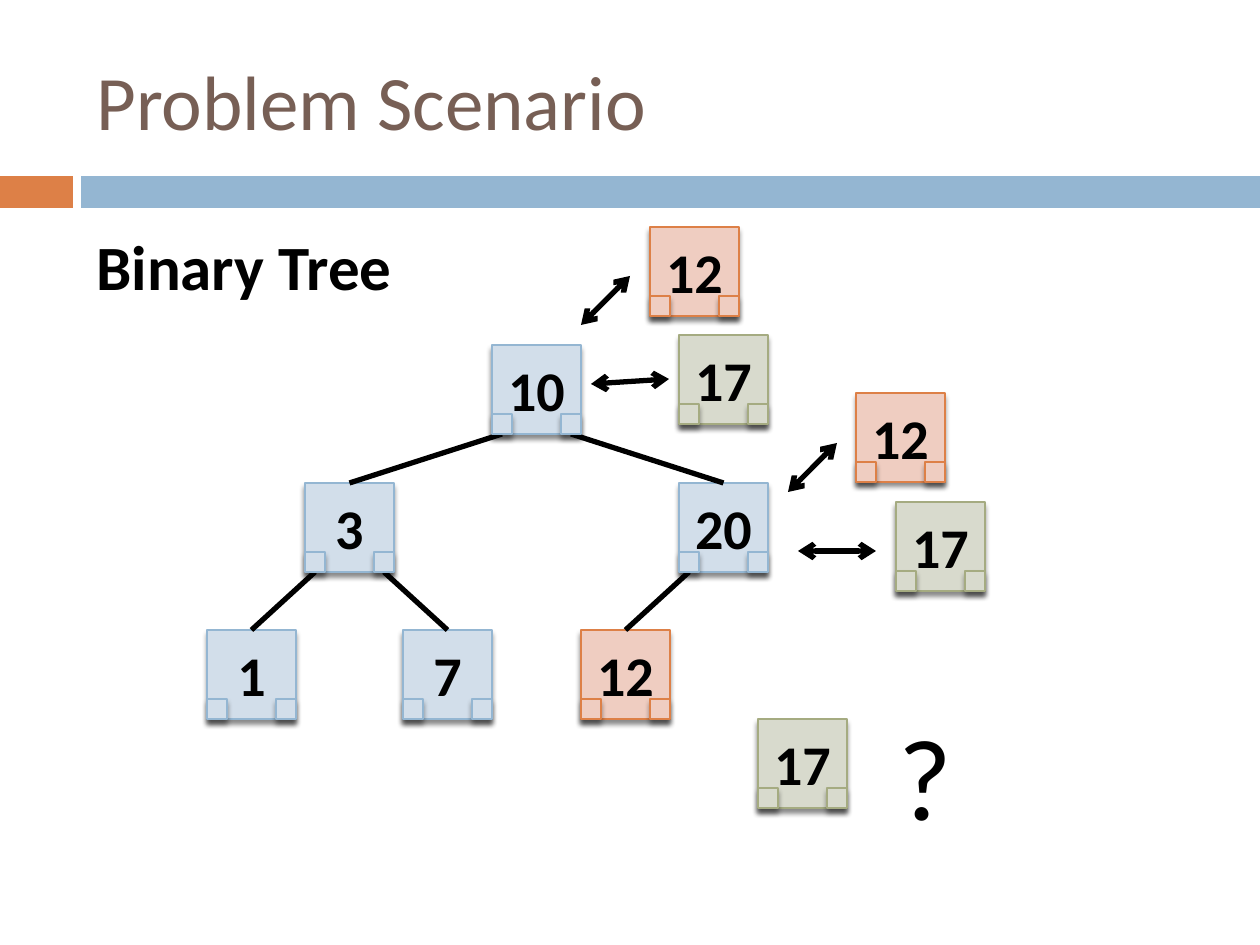
from lxml.etree import SubElement
from pptx import Presentation
from pptx.dml.color import RGBColor
from pptx.enum.shapes import MSO_CONNECTOR, MSO_SHAPE
from pptx.enum.text import MSO_ANCHOR, PP_ALIGN
from pptx.oxml.ns import qn
from pptx.util import Emu, Pt

COLORS = {"title": "775F55", "text": "000000", "orange": "DD8047", "blue": "94B6D2"}
# Node styles: fill, outline
STYLES = {
    "tree": ("D2DEEA", "94B6D2"),
    "first": ("EFCDC1", "DD8047"),
    "second": ("D8DACD", "A5AB81"),
}

# Header bars: left, top, width, height, colour
BARS = [(0, 176, 73, 32, "orange"), (81, 176, 1179, 32, "blue")]
# Texts: wording, left, top, width, height, size, bold, colour, anchor, space before, wrap
TEXTS = [
    ("Problem Scenario", 84, 32, 1124, 136, 44, False, "title", MSO_ANCHOR.MIDDLE, 0, True),
    ("Binary Tree", 84, 221, 1124, 164, 36, True, "text", MSO_ANCHOR.TOP, 7, True),
    ("?", 886, 699, 81, 152, 66, False, "text", MSO_ANCHOR.TOP, 0, False),
]
# Tree nodes: value -> left, top, style
TREE = {
    "10": (492, 345, "tree"),
    "3": (305, 483, "tree"),
    "20": (679, 483, "tree"),
    "1": (207, 630, "tree"),
    "7": (403, 630, "tree"),
    "12": (581, 630, "first"),
}
# Edges: parent, side of the parent, child
EDGES = [("10", "left", "3"), ("10", "right", "20"), ("3", "left", "1"),
         ("3", "right", "7"), ("20", "left", "12")]
# Values being inserted: value, left, top, style
INSERTED = [
    ("12", 650, 227, "first"),
    ("17", 679, 335, "second"),
    ("12", 856, 393, "first"),
    ("17", 896, 502, "second"),
    ("17", 758, 719, "second"),
]
# Comparison arrows: start, end
COMPARISONS = [
    ((630, 276), (581, 325)),
    ((669, 379), (591, 384)),
    ((837, 443), (788, 492)),
    ((876, 551), (798, 551)),
]
NODE, POINTER = 89, 20


def px(length):
    return Emu(round(length * 914400 / 126))


def rgb(code):
    return RGBColor.from_string(code)


def add_box(page, left, top, width, height, fill, line=None):
    box = page.shapes.add_shape(MSO_SHAPE.RECTANGLE, px(left), px(top), px(width), px(height))
    box.shadow.inherit = False
    box.fill.solid()
    box.fill.fore_color.rgb = rgb(fill)
    if line is None:
        box.line.fill.background()
    else:
        box.line.color.rgb = rgb(line)
        box.line.width = Pt(0.79)
    return box


def write(box, wording, size, bold, color, anchor):
    box.text_frame.vertical_anchor = anchor
    para = box.text_frame.paragraphs[0]
    para.text = wording
    para.font.name = "Calibri"
    para.font.size = Pt(size)
    para.font.bold = bold
    para.font.color.rgb = rgb(COLORS[color])
    return para


def add_shaded_square(page, left, top, side, style):
    box = add_box(page, left, top, side, side, *STYLES[style])
    effects = box._element.spPr.find(qn("a:effectLst"))
    shadow = SubElement(effects, qn("a:outerShdw"), blurRad=str(Pt(3)), dist=str(Pt(2.4)),
                        dir="5400000", algn="ctr", rotWithShape="0")
    color = SubElement(shadow, qn("a:srgbClr"), val="000000")
    SubElement(color, qn("a:alpha"), val="45000")
    return box


def add_node(page, value, left, top, style):
    box = add_shaded_square(page, left, top, NODE, style)
    para = write(box, value, 32, True, "text", MSO_ANCHOR.MIDDLE)
    para.alignment = PP_ALIGN.CENTER


def add_pointers(page, left, top, style):
    inset = NODE - POINTER
    for shift in (inset, 0):
        add_shaded_square(page, left + shift, top + inset, POINTER, style)


def add_line(page, start, end, arrows=False):
    line = page.shapes.add_connector(MSO_CONNECTOR.STRAIGHT, *map(px, start + end))
    line.line.color.rgb = rgb(COLORS["text"])
    line.line.width = Pt(3)
    if arrows:
        for tag in ("a:headEnd", "a:tailEnd"):
            SubElement(line.line._get_or_add_ln(), qn(tag), type="arrow")
    SubElement(line._element.spPr, qn("a:effectLst"))


def main():
    deck = Presentation()
    deck.slide_width, deck.slide_height = px(1260), px(945)
    page = deck.slides.add_slide(deck.slide_layouts[6])

    # Header bars and texts
    for *frame, color in BARS:
        add_box(page, *frame, COLORS[color])
    for wording, left, top, width, height, size, bold, color, anchor, before, wrap in TEXTS:
        box = page.shapes.add_textbox(px(left), px(top), px(width), px(height))
        box.text_frame.word_wrap = wrap
        para = write(box, wording, size, bold, color, anchor)
        para.space_before = Pt(before)

    # Tree: nodes, edges, then the pointer cells above the edges
    for value, place in TREE.items():
        add_node(page, value, *place)
    for parent, side, child in EDGES:
        left, top, _ = TREE[parent]
        child_left, child_top, _ = TREE[child]
        shift = POINTER / 2 if side == "left" else NODE - POINTER / 2
        add_line(page, (left + shift, top + NODE), (child_left + NODE / 2, child_top))
    for place in TREE.values():
        add_pointers(page, *place)

    # Inserted values and their comparisons
    for value, *place in INSERTED:
        add_node(page, value, *place)
        add_pointers(page, *place)
    for start, end in COMPARISONS:
        add_line(page, start, end, arrows=True)

    deck.save("out.pptx")


if __name__ == "__main__":
    main()
